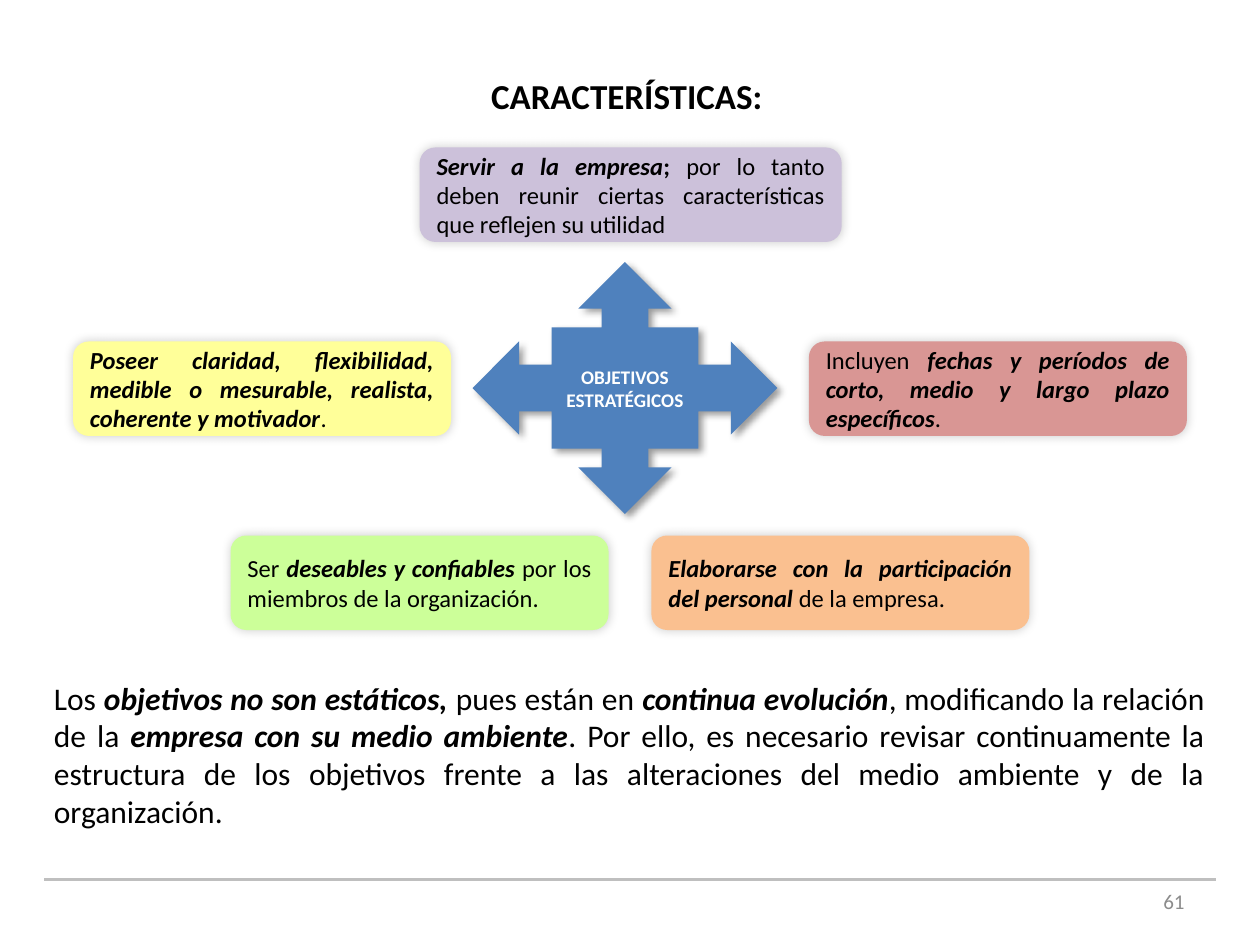
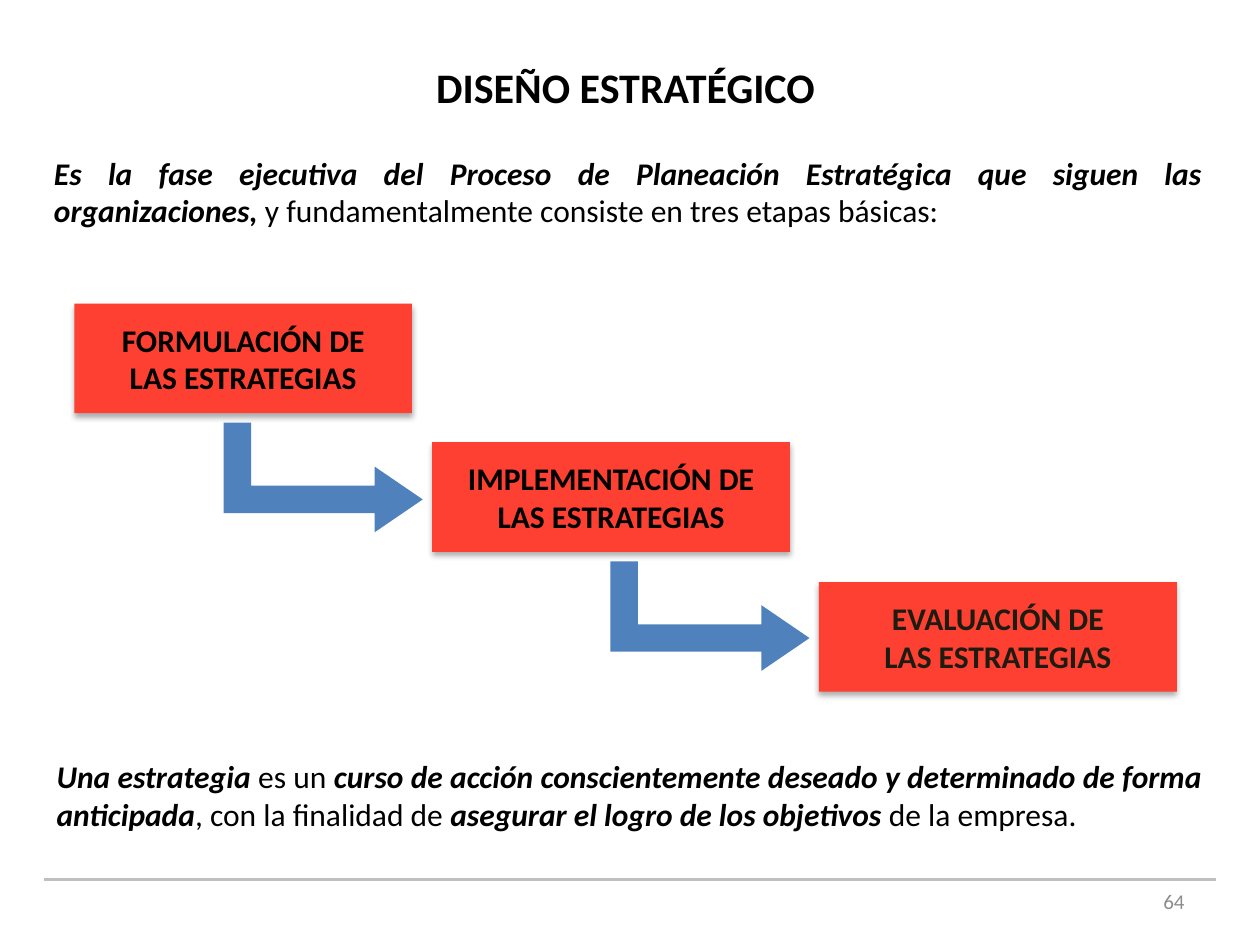
from lxml import etree
from pptx import Presentation
from pptx.dml.color import RGBColor
from pptx.enum.shapes import MSO_CONNECTOR, MSO_SHAPE
from pptx.enum.text import MSO_ANCHOR, PP_ALIGN
from pptx.oxml.ns import qn
from pptx.util import Inches, Pt

FONT = "Calibri"
BLACK, WHITE, BLUE, RED = "000000", "FFFFFF", "4F81BD", "FD4031"
RULE_GRAY, NUMBER_GRAY, DARK = "BFBFBF", "8C8C8C", "1E1C11"

# Shadows: opacity %, blur pt, distance pt, direction in degrees
ARROW_SHADOW = (40, 4, 3, 45)
CARD_SHADOW = (20, 6, 0, 225)
STAGE_SHADOW = (32, 3.5, 2.2, 90)


def color(value):
    return RGBColor.from_string(value)


class SlideBuilder:
    """Holds the shared style and the slide being built."""

    def __init__(self):
        self.deck = Presentation()
        self.deck.slide_width, self.deck.slide_height = Inches(10), Inches(7.5)
        self.page = None

    def new_page(self, number):
        self.page = self.deck.slides.add_slide(self.deck.slide_layouts[6])
        # Footer rule and page number
        rule = self.page.shapes.add_connector(
            MSO_CONNECTOR.STRAIGHT, Inches(0.35), Inches(6.98), Inches(9.65), Inches(6.98))
        rule.line.color.rgb = color(RULE_GRAY)
        rule.line.width = Pt(2)
        etree.SubElement(rule._element.spPr, qn("a:effectLst"))
        self.text((7.17, 6.95, 2.33, 0.4), [[(number, "")]], 12, PP_ALIGN.RIGHT,
                  NUMBER_GRAY, MSO_ANCHOR.MIDDLE)

    def fill_text(self, shape, paragraphs, size, align, font_color, anchor, wrap=True):
        """Each paragraph is a list of (text, style); style holds b and/or i."""
        frame = shape.text_frame
        frame.word_wrap = wrap
        frame.vertical_anchor = anchor
        for index, spans in enumerate(paragraphs):
            para = frame.paragraphs[0] if index == 0 else frame.add_paragraph()
            para.alignment = align
            for content, style in spans:
                span = para.add_run()
                span.text = content
                span.font.name, span.font.size = FONT, Pt(size)
                span.font.bold, span.font.italic = "b" in style, "i" in style
                span.font.color.rgb = color(font_color)

    def text(self, area, paragraphs, size=18, align=PP_ALIGN.JUSTIFY,
             font_color=BLACK, anchor=MSO_ANCHOR.TOP):
        box = self.page.shapes.add_textbox(*map(Inches, area))
        self.fill_text(box, paragraphs, size, align, font_color, anchor)

    def title(self, area, content, size):
        self.text(area, [[(content, "b")]], size, PP_ALIGN.CENTER, anchor=MSO_ANCHOR.MIDDLE)

    def shape(self, kind, area, fill, shadow=None):
        shape = self.page.shapes.add_shape(kind, *map(Inches, area))
        shape.fill.solid()
        shape.fill.fore_color.rgb = color(fill)
        shape.line.fill.background()
        shape.shadow.inherit = False
        if shadow:
            opacity, blur, distance, direction = shadow
            effects = shape._element.spPr.find(qn("a:effectLst"))
            outer = etree.SubElement(
                effects, qn("a:outerShdw"), blurRad=str(Pt(blur)), dist=str(Pt(distance)),
                dir=str(direction * 60000), algn="ctr", rotWithShape="0")
            tint = etree.SubElement(outer, qn("a:srgbClr"), val=BLACK)
            etree.SubElement(tint, qn("a:alpha"), val=str(opacity * 1000))
        return shape

    def card(self, left, top, width, fill, spans):
        card = self.shape(MSO_SHAPE.FLOWCHART_ALTERNATE_PROCESS,
                          (left, top, width, 0.75), fill, CARD_SHADOW)
        self.fill_text(card, [spans], 14, PP_ALIGN.JUSTIFY, BLACK, MSO_ANCHOR.MIDDLE)

    def stage(self, left, top, width, name, font_color):
        stage = self.shape(MSO_SHAPE.RECTANGLE, (left, top, width, 0.87), RED, STAGE_SHADOW)
        lines = [[(name, "b")], [("LAS ESTRATEGIAS", "b")]]
        self.fill_text(stage, lines, 18, PP_ALIGN.CENTER, font_color, MSO_ANCHOR.MIDDLE,
                       wrap=False)

    def step_arrow(self, left, top):
        arrow = self.shape(MSO_SHAPE.BENT_UP_ARROW, (left, top, 0.87, 1.58), BLUE)
        arrow.rotation = 90
        for index, value in enumerate((0.25, 0.3, 0.44)):
            arrow.adjustments[index] = value


def build_characteristics(builder):
    builder.new_page("61")

    # Central four-way arrow
    hub = builder.shape(MSO_SHAPE.QUAD_ARROW_CALLOUT, (3.75, 2.08, 2.42, 2), BLUE, ARROW_SHADOW)
    builder.fill_text(hub, [[("OBJETIVOS ESTRATÉGICOS", "b")]], 11, PP_ALIGN.CENTER,
                      WHITE, MSO_ANCHOR.MIDDLE)

    # Characteristics around the arrow
    cards = [
        (3.33, 1.17, 3.35, "CCC1DA", [
            ("Servir a la empresa", "bi"), ("; ", "b"),
            ("por lo tanto deben reunir ciertas características que reflejen su utilidad", "")]),
        (6.42, 2.71, 3, "D99694", [
            ("Incluyen ", ""),
            ("fechas y períodos de corto, medio y largo plazo específicos", "bi"), (".", "")]),
        (1.83, 4.25, 3, "CCFF99", [
            ("Ser ", ""), ("deseables y confiables", "bi"),
            (" por los miembros de la organización.", "")]),
        (0.58, 2.71, 3, "FFFF99", [
            ("Poseer claridad, flexibilidad, medible o mesurable, realista, "
             "coherente y motivador", "bi"), (".", "")]),
        (5.17, 4.25, 3, "FAC090", [
            ("Elaborarse con la participación del personal", "bi"), (" de la empresa.", "")]),
    ]
    for card in cards:
        builder.card(*card)

    # Title and closing text
    builder.title((0.25, 0.54, 9.45, 0.43), "CARACTERÍSTICAS:", 20)
    builder.text((0.33, 5.33, 9.33, 1.31), [[
        ("Los ", ""), ("objetivos no son estáticos,", "bi"), (" pues están en ", ""),
        ("continua evolución", "bi"), (", modificando la relación de la ", ""),
        ("empresa con su medio ambiente", "bi"),
        (". Por ello, es necesario revisar continuamente la estructura de los objetivos "
         "frente a las alteraciones del medio ambiente y de la organización.", ""),
    ]], anchor=MSO_ANCHOR.MIDDLE)


def build_design(builder):
    builder.new_page("64")

    # Title and introduction
    builder.text((0.33, 1.17, 9.31, 0.71), [[
        ("Es la fase ejecutiva del Proceso de Planeación Estratégica que siguen "
         "las organizaciones, ", "bi"),
        ("y fundamentalmente consiste en tres etapas básicas:", "")]])
    builder.title((2.95, 0.44, 4.03, 0.5), "DISEÑO ESTRATÉGICO", 24)

    # Staircase of stages joined by arrows
    builder.stage(0.59, 2.41, 2.68, "FORMULACIÓN DE", BLACK)
    builder.stage(3.43, 3.51, 2.84, "IMPLEMENTACIÓN DE", BLACK)
    builder.stage(6.5, 4.62, 2.84, "EVALUACIÓN DE", DARK)
    for step in range(2):
        builder.step_arrow(2.13 + step * 3.07, 3 + step * 1.1)

    # Definition of a strategy
    builder.text((0.35, 5.96, 9.29, 0.71), [[
        ("Una estrategia ", "bi"), ("es un ", ""),
        ("curso de acción conscientemente deseado y determinado de forma anticipada", "bi"),
        (", con la finalidad de ", ""), ("asegurar el logro de los objetivos", "bi"),
        (" de la empresa.", "")]])


def main():
    builder = SlideBuilder()
    build_characteristics(builder)
    build_design(builder)
    builder.deck.save("out.pptx")


if __name__ == "__main__":
    main()
